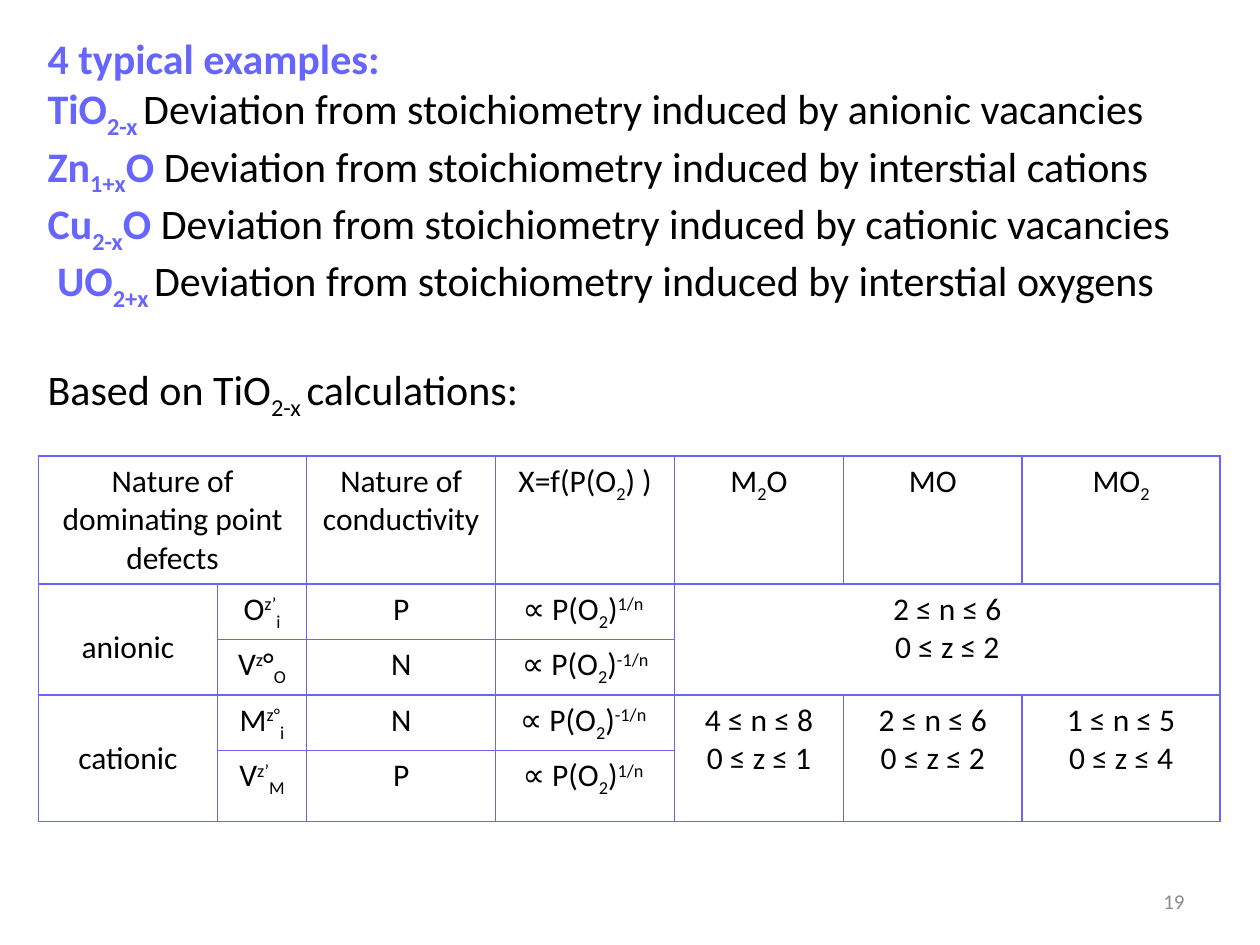
from lxml.etree import SubElement
from pptx import Presentation
from pptx.dml.color import RGBColor
from pptx.enum.text import MSO_ANCHOR, MSO_AUTO_SIZE, PP_ALIGN
from pptx.oxml.ns import qn
from pptx.util import Pt

COLORS = {"accent": "6666FF", "text": "000000", "muted": "8C8C8C"}
FONT = "Calibri"
BASELINES = {"_": "-25000", "^": "30000"}

# Runs are split by "|"; "*" marks bold accent, "_" subscript, "^" superscript.
EXAMPLES = [
    "*4 typical examples: ",
    "*TiO|*_2-x |Deviation from stoichiometry induced by anionic vacancies",
    "*Zn|*_1+x|*O |Deviation from stoichiometry induced by interstial cations",
    "*Cu|*_2-x|*O |Deviation from stoichiometry induced by cationic vacancies",
    " |*UO|*_2+x |Deviation from stoichiometry induced by interstial oxygens",
    "Based on TiO|_2-x |calculations: ",
]

# Table cells: (row, column, rows spanned, columns spanned, lines)
CELLS = [
    (0, 0, 1, 2, ["Nature of dominating point defects"]),
    (0, 2, 1, 1, ["Nature of conductivity"]),
    (0, 3, 1, 1, ["X=f(P(O|_2|) )"]),
    (0, 4, 1, 1, ["M|_2|O"]),
    (0, 5, 1, 1, ["MO"]),
    (0, 6, 1, 1, ["MO|_2"]),
    (1, 0, 2, 1, ["anionic"]),
    (1, 4, 2, 3, ["2 ≤ n ≤ 6", "0 ≤ z ≤ 2"]),
    (3, 0, 2, 1, ["cationic"]),
    (3, 4, 2, 1, ["4 ≤ n ≤ 8", "0 ≤ z ≤ 1"]),
    (3, 5, 2, 1, ["2 ≤ n ≤ 6", "0 ≤ z ≤ 2"]),
    (3, 6, 2, 1, ["1 ≤ n ≤ 5", "0 ≤ z ≤ 4"]),
]
DEFECTS = [
    ("O|^z’|_i", "P", "1/n "),
    ("V|^z|°|_O", "N", "-1/n"),
    ("M|^z°|_i", "N", "-1/n "),
    ("V|^z’|_M", "P", "1/n "),
]
for row, (defect, conductivity, exponent) in enumerate(DEFECTS, start=1):
    entries = (defect, conductivity, f"∝ P(O|_2|)|^{exponent}")
    CELLS += [(row, column, 1, 1, [entry]) for column, entry in enumerate(entries, start=1)]

COLUMN_WIDTHS = [102.2, 51.1, 108, 102.2, 96.5, 102.2, 113]
ROW_HEIGHTS = [72, 31.75, 31.75, 31.75, 40.5]


class SlideBuilder:
    def __init__(self, slide):
        self.slide = slide

    def add_runs(self, paragraph, markup, size, alignment, color="text"):
        paragraph.alignment = alignment
        for piece in markup.split("|"):
            strong = piece.startswith("*")
            piece = piece.removeprefix("*")
            baseline = BASELINES.get(piece[0])
            run = paragraph.add_run()
            run.text = piece[1:] if baseline else piece
            run.font.name = FONT
            run.font.size = Pt(size)
            run.font.bold = strong
            run.font.color.rgb = RGBColor.from_string(COLORS["accent" if strong else color])
            if baseline:
                run.font._element.set("baseline", baseline)

    def fill_lines(self, frame, lines, size, alignment, color="text"):
        for index, line in enumerate(lines):
            paragraph = frame.paragraphs[0] if index == 0 else frame.add_paragraph()
            self.add_runs(paragraph, line, size, alignment, color)
        return frame.paragraphs

    def body(self, shape, left, top, width, height, lines):
        shape.left, shape.top, shape.width, shape.height = map(Pt, (left, top, width, height))
        frame = shape.text_frame
        frame.word_wrap = True
        frame.auto_size = MSO_AUTO_SIZE.NONE
        frame.vertical_anchor = MSO_ANCHOR.TOP
        paragraphs = self.fill_lines(frame, lines, 24, PP_ALIGN.JUSTIFY)
        for paragraph in paragraphs:
            paragraph.space_before = Pt(0)
            properties = paragraph._p.get_or_add_pPr()
            properties.set("marL", "0")
            properties.set("indent", "0")
            SubElement(properties, qn("a:buNone"))
        # One line of space sets off the closing sentence
        paragraphs[-1].space_before = Pt(29.3)

    def text(self, left, top, width, height, line, size, alignment, color):
        box = self.slide.shapes.add_textbox(*map(Pt, (left, top, width, height)))
        frame = box.text_frame
        frame.word_wrap = True
        frame.vertical_anchor = MSO_ANCHOR.MIDDLE
        self.fill_lines(frame, [line], size, alignment, color)

    def border(self, cell):
        properties = cell._tc.get_or_add_tcPr()
        for index, side in enumerate(("lnL", "lnR", "lnT", "lnB")):
            line = properties.makeelement(qn(f"a:{side}"), {"w": str(Pt(1))})
            fill = SubElement(line, qn("a:solidFill"))
            SubElement(fill, qn("a:srgbClr"), val=COLORS["accent"])
            properties.insert(index, line)

    def table(self, left, top, widths, heights, cells):
        shape = self.slide.shapes.add_table(
            len(heights), len(widths), Pt(left), Pt(top), Pt(sum(widths)), Pt(sum(heights)))
        table = shape.table
        table.first_row = table.horz_banding = False
        for column, width in zip(table.columns, widths):
            column.width = Pt(width)
        for row, height in zip(table.rows, heights):
            row.height = Pt(height)
        for cell in table.iter_cells():
            cell.fill.background()
            self.border(cell)
        for row, column, row_span, column_span, lines in cells:
            cell = table.cell(row, column)
            if row_span * column_span > 1:
                cell.merge(table.cell(row + row_span - 1, column + column_span - 1))
            # Row group labels sit one line lower
            if row_span > 1 and column == 0:
                cell.margin_top = Pt(25.6)
            self.fill_lines(cell.text_frame, lines, 18, PP_ALIGN.CENTER)


def main():
    presentation = Presentation()
    presentation.slide_width, presentation.slide_height = Pt(720), Pt(540)
    slide = presentation.slides.add_slide(presentation.slide_layouts[1])
    builder = SlideBuilder(slide)

    # The heading belongs to the body text, so the title placeholder goes
    title = slide.shapes.title
    title._element.getparent().remove(title._element)

    # Examples
    builder.body(slide.placeholders[1], 20, 15, 669, 211, EXAMPLES)

    # Defect table
    builder.table(22, 260.5, COLUMN_WIDTHS, ROW_HEIGHTS, CELLS)

    # Slide number
    builder.text(516, 500.5, 168, 28.75, "19", 12, PP_ALIGN.RIGHT, "muted")

    presentation.save("out.pptx")


if __name__ == "__main__":
    main()
